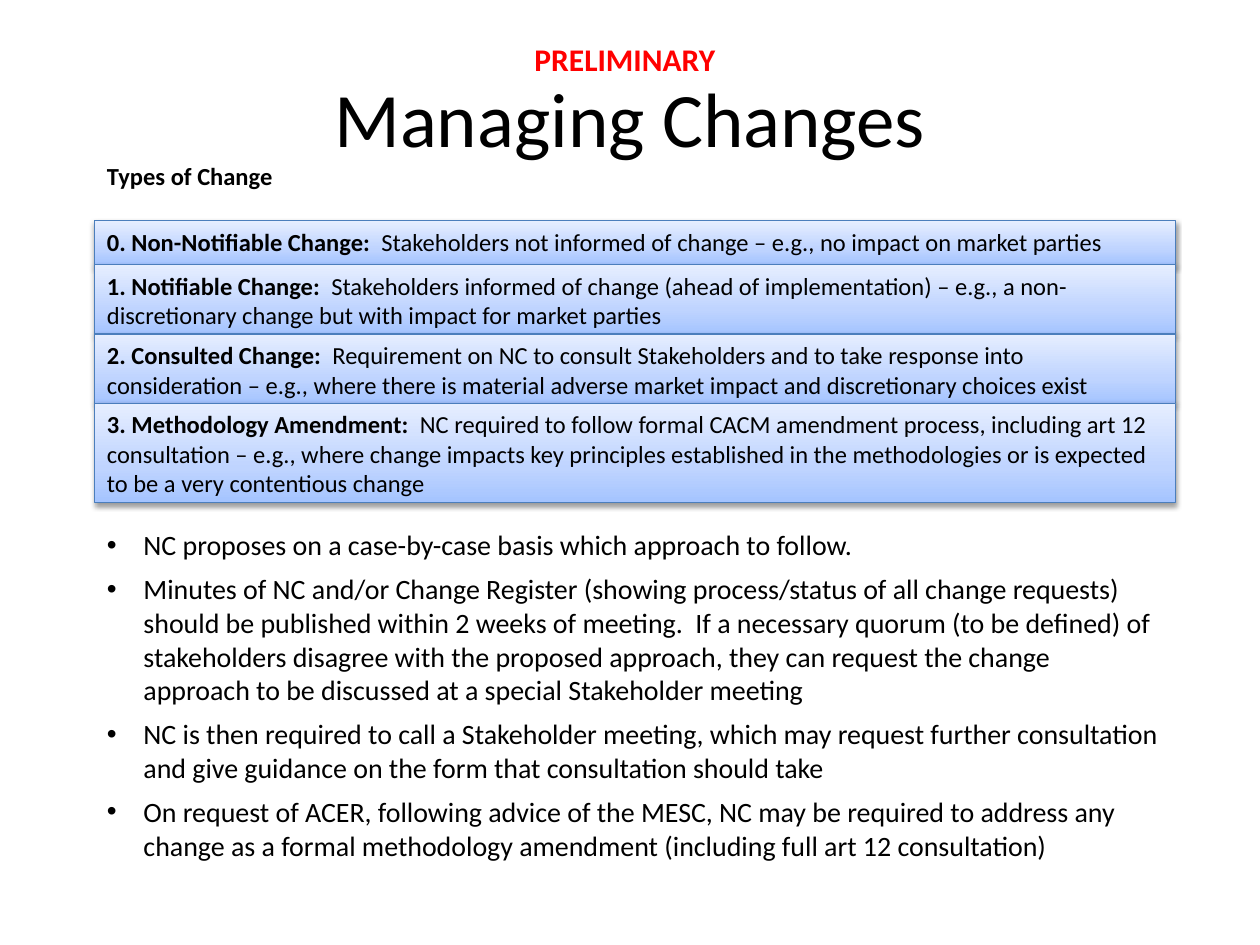
from lxml.etree import SubElement
from pptx import Presentation
from pptx.dml.color import RGBColor
from pptx.enum.shapes import MSO_SHAPE
from pptx.enum.text import MSO_ANCHOR, MSO_AUTO_SIZE, PP_ALIGN
from pptx.oxml.ns import qn
from pptx.util import Inches, Pt

LEFT, WIDTH = 0.75, 8.58

CHANGE_TYPES = [
    (0.35, "0. Non-Notifiable Change:  ",
     "Stakeholders not informed of change – e.g., no impact on market parties"),
    (0.55, "1. Notifiable Change:  ",
     "Stakeholders informed of change (ahead of implementation) – e.g., a "
     "non-discretionary change but with impact for market parties"),
    (0.55, "2. Consulted Change:  ",
     "Requirement on NC to consult Stakeholders and to take response into "
     "consideration – e.g., where there is material adverse market impact and "
     "discretionary choices exist"),
    (0.79, "3. Methodology Amendment:  ",
     "NC required to follow formal CACM amendment process, including art 12 "
     "consultation – e.g., where change impacts key principles established in "
     "the methodologies or is expected to be a very contentious change"),
]

PROCESS = [
    "NC proposes on a case-by-case basis which approach to follow.",
    "Minutes of NC and/or Change Register (showing process/status of all change "
    "requests) should be published within 2 weeks of meeting.  If a necessary "
    "quorum (to be defined) of stakeholders disagree with the proposed approach, "
    "they can request the change approach to be discussed at a special "
    "Stakeholder meeting",
    "NC is then required to call a Stakeholder meeting, which may request further "
    "consultation and give guidance on the form that consultation should take",
    "On request of ACER, following advice of the MESC, NC may be required to "
    "address any change as a formal methodology amendment (including full art 12 "
    "consultation)",
]


def rgb(color):
    return RGBColor.from_string(color)


def add_run(p, text, font="Calibri", size=14, color="000000", bold=False):
    r = p.add_run()
    r.text = text
    r.font.name, r.font.size, r.font.bold = font, Pt(size), bold
    r.font.color.rgb = rgb(color)


class SlideBuilder:
    gradient = [(0, "A4C4FF"), (35, "BFD4FF"), (100, "E6EEFF")]
    border = "4B7EBC"
    indent = 0.29

    def __init__(self, slide):
        self.s = slide

    def label(self, text, x, y, w, h, align=PP_ALIGN.LEFT, wrap=True,
              anchor=MSO_ANCHOR.TOP, grow=True, **fmt):
        tf = self.s.shapes.add_textbox(
            Inches(x), Inches(y), Inches(w), Inches(h)).text_frame
        tf.word_wrap, tf.vertical_anchor = wrap, anchor
        tf.auto_size = MSO_AUTO_SIZE.SHAPE_TO_FIT_TEXT if grow else MSO_AUTO_SIZE.NONE
        p = tf.paragraphs[0]
        p.alignment = align
        add_run(p, text, **fmt)

    def box(self, y, h):
        sp = self.s.shapes.add_shape(
            MSO_SHAPE.RECTANGLE, Inches(LEFT), Inches(y), Inches(WIDTH), Inches(h))
        sp.shadow.inherit = False
        sp.text_frame.word_wrap = True
        sp.text_frame.vertical_anchor = MSO_ANCHOR.TOP
        return sp

    def gradient_fill(self, sp):
        sp.fill.gradient()
        sp.fill.gradient_angle = 90
        stops = sp._element.spPr.find(".//" + qn("a:gsLst"))
        stops.clear()
        for pos, color in self.gradient:
            gs = SubElement(stops, qn("a:gs"), pos=str(pos * 1000))
            SubElement(gs, qn("a:srgbClr"), val=color)

    def drop_shadow(self, sp):
        effects = sp._element.spPr.find(qn("a:effectLst"))
        shadow = SubElement(effects, qn("a:outerShdw"), blurRad=str(Pt(3.1)),
                            dist=str(Pt(1.6)), dir="5400000", rotWithShape="0")
        color = SubElement(shadow, qn("a:srgbClr"), val="000000")
        SubElement(color, qn("a:alpha"), val="38000")

    def change_box(self, y, h, name, description):
        sp = self.box(y, h)
        self.gradient_fill(sp)
        sp.line.color.rgb, sp.line.width = rgb(self.border), Pt(0.75)
        self.drop_shadow(sp)
        p = sp.text_frame.paragraphs[0]
        p.alignment = PP_ALIGN.LEFT
        add_run(p, name, bold=True)
        add_run(p, description)

    def bullets(self, y, h, items):
        sp = self.box(y, h)
        sp.fill.solid()
        sp.fill.fore_color.rgb = rgb("FFFFFF")
        sp.line.fill.background()
        tf = sp.text_frame
        for i, text in enumerate(items):
            p = tf.add_paragraph() if i else tf.paragraphs[0]
            p.alignment, p.space_before = PP_ALIGN.LEFT, Pt(6)
            pPr = p._p.get_or_add_pPr()
            pPr.set("marL", str(Inches(self.indent)))
            pPr.set("indent", str(-Inches(self.indent)))
            SubElement(pPr, qn("a:buFont"), typeface="Arial")
            SubElement(pPr, qn("a:buChar"), char="•")
            add_run(p, text, size=16)


def main():
    prs = Presentation()
    prs.slide_width, prs.slide_height = Inches(10), Inches(7.5)
    b = SlideBuilder(prs.slides.add_slide(prs.slide_layouts[6]))

    # Title
    b.label("Managing Changes", 0.5, 0.3, 9, 1.25, align=PP_ALIGN.CENTER,
            anchor=MSO_ANCHOR.MIDDLE, grow=False, size=44)

    # Stacked types of change
    y = 1.75
    for h, name, description in CHANGE_TYPES:
        b.change_box(y, h, name, description)
        y += h

    # Process rules
    b.bullets(4.14, 2.87, PROCESS)

    # Heading and status
    b.label("Types of Change", LEFT, 1.23, 1.52, 0.34, wrap=False, bold=True)
    b.label("PRELIMINARY", 3.11, 0.27, 3.7, 0.4, align=PP_ALIGN.CENTER,
            size=18, color="FF0000", bold=True)

    prs.save("out.pptx")


if __name__ == "__main__":
    main()
